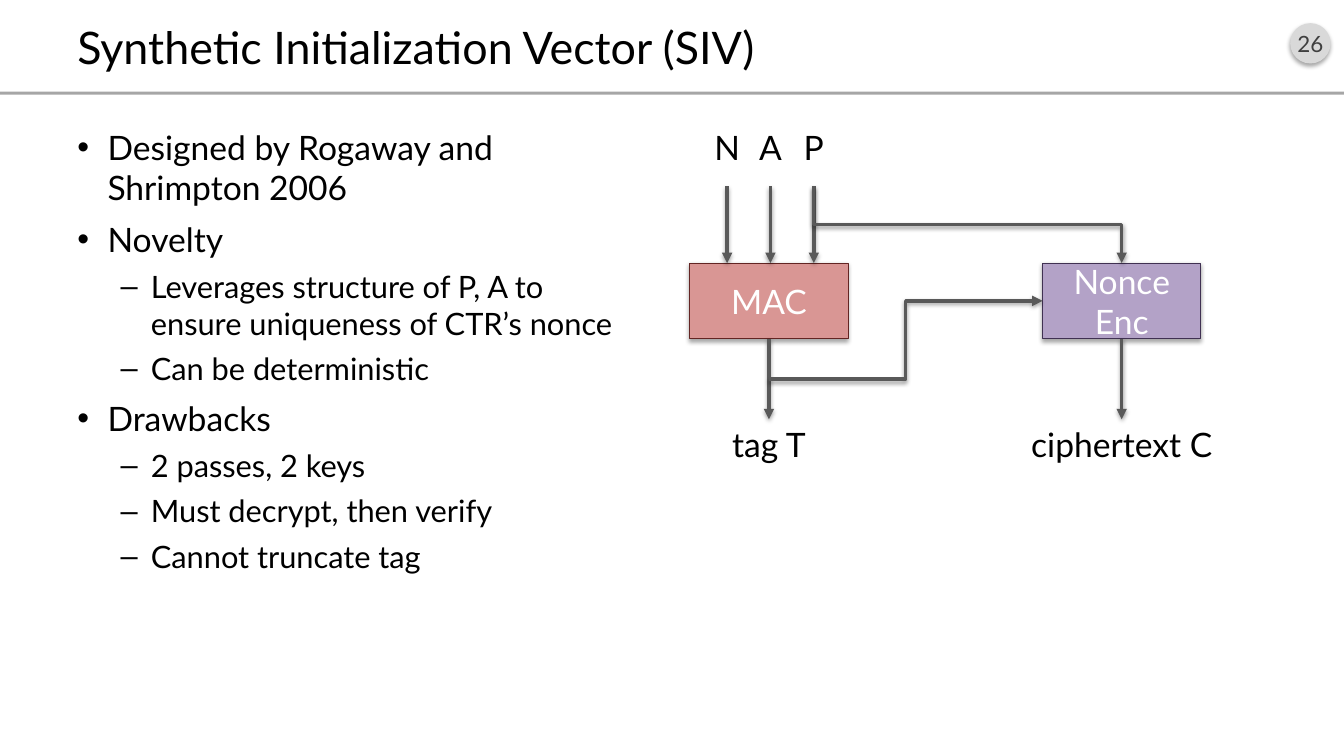
import lxml.etree
import pptx
import pptx.util
import pptx.dml.color
import pptx.enum.shapes
import pptx.enum.text
import pptx.oxml.ns

COLOURS = {
    "text": "000000",
    "white": "FFFFFF",
    "badge": "D9D9D9",
    "number": "404040",
    "rule": "A6A6A6",
    "arrow": "595959",
    "mac": "D99694",
    "mac edge": "632523",
    "enc": "B3A2C7",
    "enc edge": "403152",
}
RGB = pptx.dml.color.RGBColor.from_string
SHAPES = pptx.enum.shapes.MSO_SHAPE
LINES = pptx.enum.shapes.MSO_CONNECTOR
ALIGN = pptx.enum.text.PP_ALIGN
MIDDLE = pptx.enum.text.MSO_ANCHOR.MIDDLE
NO_FIT = pptx.enum.text.MSO_AUTO_SIZE.NONE

deck = pptx.Presentation()
deck.slide_width = pptx.util.Inches(13.33)
deck.slide_height = pptx.util.Inches(7.5)
column = deck.slide_width / 40
row = deck.slide_height / 30
page = deck.slides.add_slide(deck.slide_layouts[1])


def write(para, text, size, colour, align):
    para.alignment = align
    span = para.add_run()
    span.text = text
    formats = {"name": "Lato", "size": pptx.util.Pt(size)}
    for name, value in formats.items():
        setattr(span.font, name, value)
    span.font.color.rgb = RGB(COLOURS[colour])


def add_shadow(properties, distance, opacity):
    effects = properties.find(pptx.oxml.ns.qn("a:effectLst"))
    if effects is None:
        effects = lxml.etree.SubElement(properties, pptx.oxml.ns.qn("a:effectLst"))
    shadow = lxml.etree.SubElement(effects, pptx.oxml.ns.qn("a:outerShdw"), blurRad="40000",
                                   dist=str(pptx.util.Pt(distance)), dir="5400000", rotWithShape="0")
    black = lxml.etree.SubElement(shadow, pptx.oxml.ns.qn("a:srgbClr"), val="000000")
    lxml.etree.SubElement(black, pptx.oxml.ns.qn("a:alpha"), val=str(opacity * 1000))


title = page.shapes.title
body = page.placeholders[1]
for holder, (left, top, width, height) in ((title, (2, 0.64, 36, 2.4)), (body, (2, 4.84, 17.07, 23))):
    frame = {"left": left * column, "top": top * row, "width": width * column, "height": height * row}
    for name, value in frame.items():
        setattr(holder, name, round(value))
    holder.text_frame.auto_size = NO_FIT
title.text_frame.vertical_anchor = MIDDLE
write(title.text_frame.paragraphs[0], "Synthetic Initialization Vector (SIV)", 32, "text", ALIGN.LEFT)

points = [
    (0, "Designed by Rogaway and Shrimpton 2006"),
    (0, "Novelty"),
    (1, "Leverages structure of P, A to ensure uniqueness of CTR’s nonce"),
    (1, "Can be deterministic"),
    (0, "Drawbacks"),
    (1, "2 passes, 2 keys"),
    (1, "Must decrypt, then verify"),
    (1, "Cannot truncate tag"),
]
levels = [
    {"size": 24, "before": 8, "margin": 0.3, "bullet": "•"},
    {"size": 22, "before": 6, "margin": 0.73, "bullet": "–"},
]
for index, (level, text) in enumerate(points):
    para = body.text_frame.add_paragraph() if index else body.text_frame.paragraphs[0]
    style = levels[level]
    para.level = level
    para.space_before = pptx.util.Pt(style["before"])
    write(para, text, style["size"], "text", ALIGN.LEFT)
    properties = para._p.get_or_add_pPr()
    properties.set("marL", str(pptx.util.Inches(style["margin"])))
    properties.set("indent", str(pptx.util.Inches(-0.3)))
    lxml.etree.SubElement(properties, pptx.oxml.ns.qn("a:buChar"), char=style["bullet"])

box_top, box_bottom = 10.44, 13.44
input_top, label_top, output_top = 7.4, 4.84, 16.64
box_width = 4.71
mac_left, enc_left = 20.53, 31.03
mac_middle, enc_middle = mac_left + box_width / 2, enc_left + box_width / 2
inputs = [(letter, 21.64 + 1.29 * index) for index, letter in enumerate("NAP")]
plaintext = inputs[-1][1]

boxes = [
    (SHAPES.RECTANGLE, 0, 3.64, 40, 0.12, "rule", None, "", 16, "text"),
    (SHAPES.OVAL, 38.4, 0.92, 1.2, 1.6, "badge", None, "26", 16, "number"),
    (SHAPES.RECTANGLE, mac_left, box_top, box_width, 3, "mac", "mac edge", "MAC", 24, "white"),
    (SHAPES.RECTANGLE, enc_left, box_top, box_width, 3, "enc", "enc edge", "Nonce Enc", 24, "white"),
]
for kind, left, top, width, height, fill, edge, text, size, colour in boxes:
    box = page.shapes.add_shape(kind, round(left * column), round(top * row),
                                round(width * column), round(height * row))
    box.fill.solid()
    box.fill.fore_color.rgb = RGB(COLOURS[fill])
    if edge:
        box.line.color.rgb = RGB(COLOURS[edge])
        box.line.width = pptx.util.Pt(0.75)
    else:
        box.line.fill.background()
    box.shadow.inherit = False
    if text:
        add_shadow(box._element.spPr, 1.8, 35)
        box.text_frame.vertical_anchor = MIDDLE
        write(box.text_frame.paragraphs[0], text, size, colour, ALIGN.CENTER)
    if kind == SHAPES.OVAL:
        box.text_frame.margin_left = box.text_frame.margin_right = 0

labels = [(letter, middle, label_top, 1.7) for letter, middle in inputs]
labels += [("tag T", mac_middle, output_top, 3.7), ("ciphertext C", enc_middle, output_top, 6.06)]
for text, middle, top, width in labels:
    label = page.shapes.add_textbox(round((middle - width / 2) * column), round(top * row),
                                    round(width * column), round(2 * row))
    label.text_frame.word_wrap = False
    write(label.text_frame.paragraphs[0], text, 24, "text", ALIGN.CENTER)

turn_width = (box_top - input_top) * row / column
turn_height = (enc_middle - plaintext) * column / row
turn_x, turn_y = (plaintext + enc_middle) / 2, (input_top + box_top) / 2
arrows = [(LINES.STRAIGHT, middle, input_top, middle, box_top, False) for letter, middle in inputs]
arrows += [(LINES.STRAIGHT, middle, box_bottom, middle, output_top, False)
           for middle in (mac_middle, enc_middle)]
arrows += [
    (LINES.ELBOW, mac_middle, (box_bottom + output_top) / 2, enc_left, (box_top + box_bottom) / 2, False),
    (LINES.ELBOW, turn_x - turn_width / 2, turn_y - turn_height / 2,
     turn_x + turn_width / 2, turn_y + turn_height / 2, True),
]
for kind, start_x, start_y, end_x, end_y, turned in arrows:
    arrow = page.shapes.add_connector(kind, round(start_x * column), round(start_y * row),
                                      round(end_x * column), round(end_y * row))
    arrow.line.color.rgb = RGB(COLOURS["arrow"])
    arrow.line.width = pptx.util.Pt(2.5)
    properties = arrow._element.spPr
    lxml.etree.SubElement(properties.find(pptx.oxml.ns.qn("a:ln")),
                          pptx.oxml.ns.qn("a:tailEnd"), type="triangle")
    add_shadow(properties, 1.6, 38)
    if turned:
        transform = properties.find(pptx.oxml.ns.qn("a:xfrm"))
        transform.set("rot", "16200000")
        transform.set("flipH", "1")

deck.save("out.pptx")
